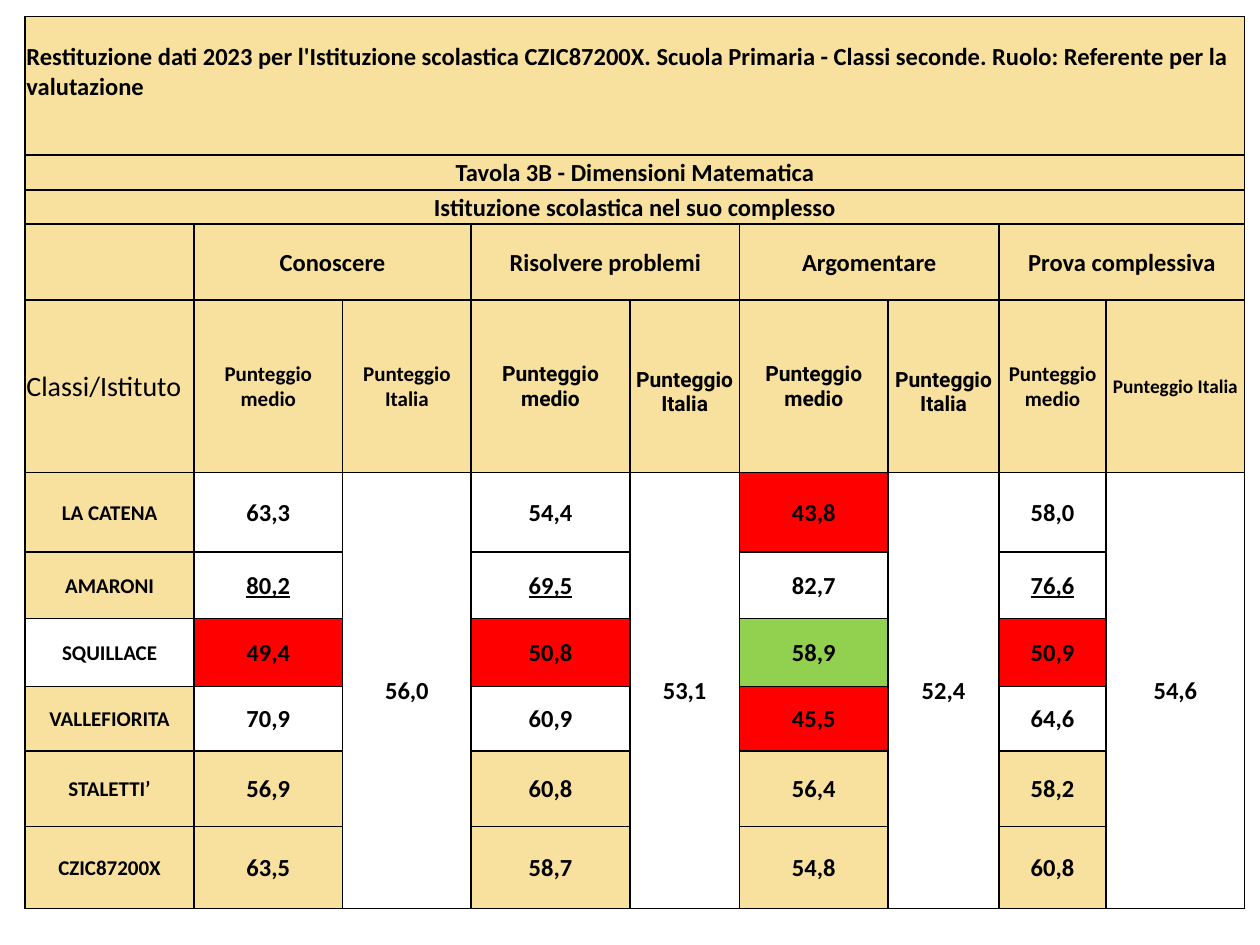
from dataclasses import dataclass

from lxml import etree
from pptx import Presentation
from pptx import util as u
from pptx.dml.color import RGBColor
from pptx.enum import text
from pptx.oxml import ns


@dataclass(frozen=True)
class Theme:
    sand: str = "F8E19F"
    red: str = "FF0000"
    green: str = "92D050"
    ink: str = "000000"
    font: str = "Calibri"
    alt_font: str = "Roboto"
    label_size: float = 16
    body_size: float = 14
    header_size: float = 12
    small_size: float = 11
    border: float = 1


THEME = Theme()
SLIDE_WIDTH, SLIDE_HEIGHT = 10, 7.5
COLUMNS = [1.34, 1.18, 1.02, 1.26, 0.87, 1.18, 0.88, 0.85, 1.1]
ROWS = [1.1, 0.28, 0.27, 0.6, 1.37, 0.63, 0.53, 0.54, 0.51, 0.6, 0.65]
GROUP_ROW, HEADER_ROW, FIRST_CLASS_ROW = 3, 4, 5

BANNERS = [
    "Restituzione dati 2023 per l'Istituzione scolastica CZIC87200X. "
    "Scuola Primaria - Classi seconde. Ruolo: Referente per la valutazione",
    "Tavola 3B - Dimensioni Matematica",
    "Istituzione scolastica nel suo complesso",
]
GROUPS = ["Conoscere", "Risolvere problemi", "Argomentare", "Prova complessiva"]
ITALY_SCORES = ["56,0", "53,1", "52,4", "54,6"]
CLASS_SCORES = {
    "LA CATENA": ["63,3", "54,4", "43,8", "58,0"],
    "AMARONI": ["80,2", "69,5", "82,7", "76,6"],
    "SQUILLACE": ["49,4", "50,8", "58,9", "50,9"],
    "VALLEFIORITA": ["70,9", "60,9", "45,5", "64,6"],
    "STALETTI’": ["56,9", "60,8", "56,4", "58,2"],
    "CZIC87200X": ["63,5", "58,7", "54,8", "60,8"],
}
SAND_SCORE_ROWS = {"STALETTI’", "CZIC87200X"}
LOW_SCORES = {"43,8", "49,4", "50,8", "50,9", "45,5"}
HIGH_SCORES = {"58,9"}
UNDERLINED_SCORES = {"80,2", "69,5", "76,6"}


def write(frame, lines, size=THEME.body_size, font=THEME.font, bold=True,
          underline=False, align=text.PP_ALIGN.CENTER, spacing=None):
    """Put each line of the text in its own paragraph."""
    for index, line in enumerate(lines.split("\n")):
        para = frame.add_paragraph() if index else frame.paragraphs[0]
        para.alignment = align
        if spacing:
            para.line_spacing = spacing
        span = para.add_run()
        span.text = line
        span.font.size = u.Pt(size)
        span.font.name = font
        span.font.bold = bold
        span.font.underline = underline
        span.font.color.rgb = RGBColor.from_string(THEME.ink)


class SlideBuilder:
    def __init__(self, deck, theme):
        self.deck = deck
        self.theme = theme
        self.slide = deck.slides.add_slide(deck.slide_layouts[6])

    def table(self, left, top, columns, rows):
        """Add a bordered, unfilled table at shares of the slide's size."""
        frame = self.slide.shapes.add_table(
            len(rows), len(columns),
            u.Emu(int(left * self.deck.slide_width)),
            u.Emu(int(top * self.deck.slide_height)),
            u.Inches(sum(columns)), u.Inches(sum(rows)))
        table = frame.table
        table.first_row = table.horz_banding = False
        for column, width in zip(table.columns, columns):
            column.width = u.Inches(width)
        for row, height in zip(table.rows, rows):
            row.height = u.Inches(height)
        for cell in table.iter_cells():
            self.border(cell)
            cell.fill.background()
            cell.vertical_anchor = text.MSO_ANCHOR.MIDDLE
            cell.margin_left = cell.margin_right = cell.margin_top = u.Inches(0.01)
            cell.margin_bottom = 0
        return table

    def border(self, cell):
        properties = cell._tc.get_or_add_tcPr()
        for side in ("lnL", "lnR", "lnT", "lnB"):
            line = etree.SubElement(properties, ns.qn(f"a:{side}"),
                                    w=str(u.Pt(self.theme.border)))
            fill = etree.SubElement(line, ns.qn("a:solidFill"))
            etree.SubElement(fill, ns.qn("a:srgbClr"), val=self.theme.ink)

    def cell(self, table, row, column, lines="", fill=None, last=None, **style):
        """Fill one cell, merged up to the (row, column) in last if given."""
        cell = table.cell(row, column)
        if last:
            cell.merge(table.cell(*last))
        if fill:
            cell.fill.solid()
            cell.fill.fore_color.rgb = RGBColor.from_string(fill)
        if lines:
            write(cell.text_frame, lines, **style)
        return cell


def score_fill(name, score):
    if score in LOW_SCORES:
        return THEME.red
    if score in HIGH_SCORES:
        return THEME.green
    return THEME.sand if name in SAND_SCORE_ROWS else None


def add_headers(builder, table):
    left = text.PP_ALIGN.LEFT
    for row, banner in enumerate(BANNERS):
        align = text.PP_ALIGN.CENTER if row else left
        cell = builder.cell(table, row, 0, banner, THEME.sand,
                            last=(row, len(COLUMNS) - 1), align=align)
        if row == 0:
            cell.margin_bottom = u.Inches(0.22)

    builder.cell(table, GROUP_ROW, 0, fill=THEME.sand)
    builder.cell(table, HEADER_ROW, 0, "Classi/Istituto", THEME.sand,
                 size=THEME.label_size, bold=False, align=left)
    for index, group in enumerate(GROUPS):
        column = 1 + 2 * index
        builder.cell(table, GROUP_ROW, column, group, THEME.sand,
                     last=(GROUP_ROW, column + 1))
        is_last = index == len(GROUPS) - 1
        is_middle = 0 < index and not is_last
        gap = " " if is_last else "\n"
        font = THEME.alt_font if is_middle else THEME.font
        builder.cell(table, HEADER_ROW, column, f"Punteggio{gap}medio", THEME.sand,
                     size=THEME.header_size, font=font)
        italy = builder.cell(table, HEADER_ROW, column + 1, f"Punteggio{gap}Italia",
                             THEME.sand, font=font,
                             size=THEME.small_size if is_last else THEME.header_size)
        if is_middle:
            italy.margin_top = u.Inches(0.1)


def add_scores(builder, table):
    for row, (name, scores) in enumerate(CLASS_SCORES.items(), FIRST_CLASS_ROW):
        label = builder.cell(table, row, 0, name, size=THEME.header_size, spacing=1.07,
                             fill=None if name == "SQUILLACE" else THEME.sand)
        label.margin_left = label.margin_right = u.Inches(0.06)
        label.margin_top = 0
        for index, score in enumerate(scores):
            builder.cell(table, row, 1 + 2 * index, score, score_fill(name, score),
                         underline=score in UNDERLINED_SCORES)
    for index, score in enumerate(ITALY_SCORES):
        column = 2 + 2 * index
        builder.cell(table, FIRST_CLASS_ROW, column, score,
                     last=(len(ROWS) - 1, column))


def main():
    deck = Presentation()
    deck.slide_width = u.Inches(SLIDE_WIDTH)
    deck.slide_height = u.Inches(SLIDE_HEIGHT)
    builder = SlideBuilder(deck, THEME)
    table = builder.table(0.2 / SLIDE_WIDTH, 0.13 / SLIDE_HEIGHT, COLUMNS, ROWS)
    add_headers(builder, table)
    add_scores(builder, table)
    deck.save("out.pptx")


if __name__ == "__main__":
    main()
